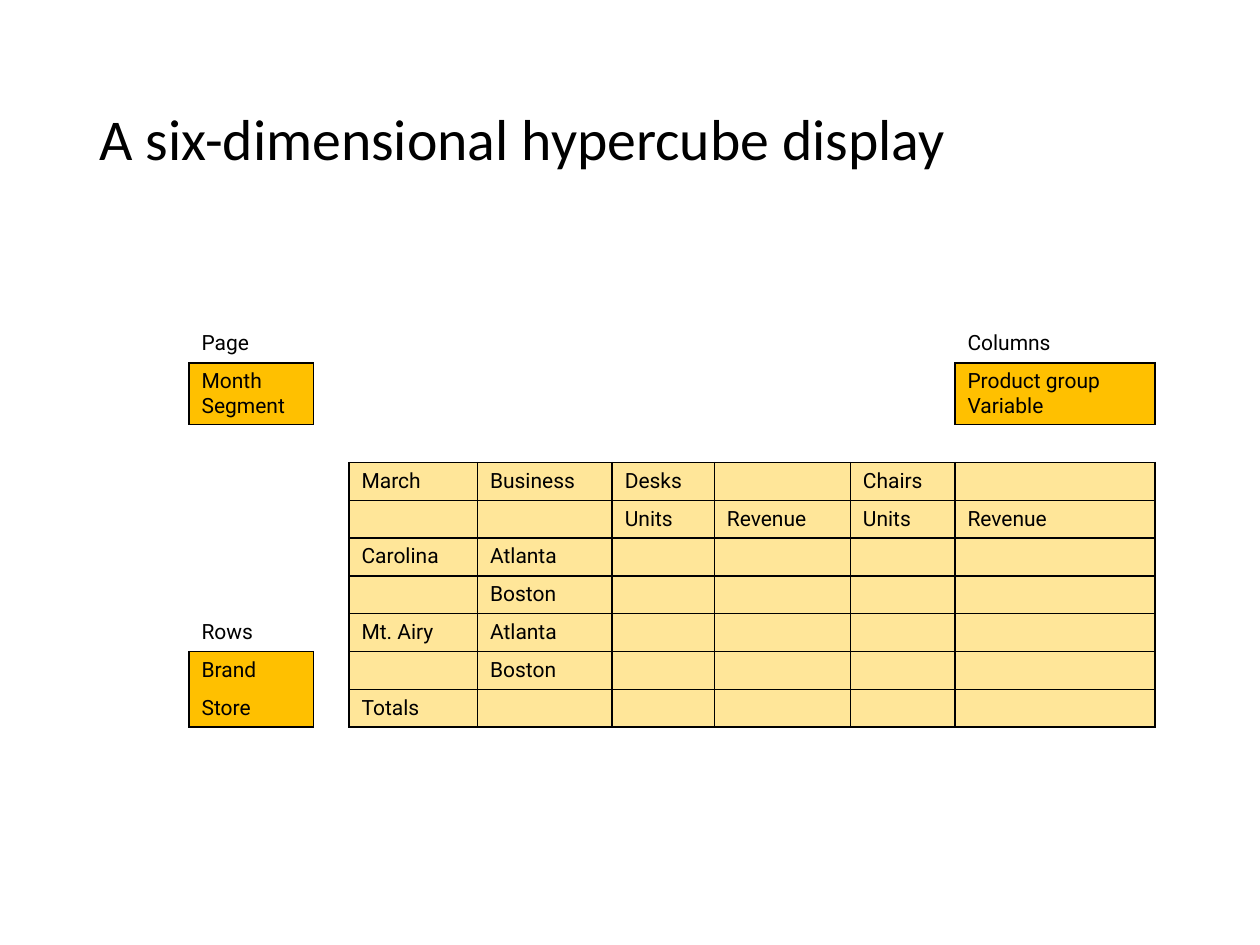
from dataclasses import dataclass

from lxml import etree
from pptx import Presentation
from pptx.dml.color import RGBColor
from pptx.enum.text import MSO_ANCHOR, MSO_AUTO_SIZE, PP_ALIGN
from pptx.oxml.ns import qn
from pptx.util import Inches, Pt

LEFT = PP_ALIGN.LEFT
MIDDLE = MSO_ANCHOR.MIDDLE
NO_AUTOFIT = MSO_AUTO_SIZE.NONE
TITLE_ONLY = 5


@dataclass(frozen=True)
class Theme:
    ink: str = "000000"
    dimension_fill: str = "FFC000"
    cube_fill: str = "FFE699"
    title_font: str = "Calibri"
    body_font: str = "Roboto"
    title_size: int = 33
    body_size: int = 12
    border_width: int = 1


THEME = Theme()

COLUMN_WIDTHS = [0.99, 0.28, 1.02, 1.07, 0.81, 1.08, 0.83, 1.59]
ROW_HEIGHTS = [0.3, 0.49] + [0.3] * 8
LAST_COLUMN = len(COLUMN_WIDTHS) - 1

# The cube's grid sits below and to the right of the dimension labels
CUBE_ROW, CUBE_COLUMN = 3, 2
CUBE = [
    ["March", "Business", "Desks", "", "Chairs", ""],
    ["", "", "Units", "Revenue", "Units", "Revenue"],
    ["Carolina", "Atlanta"],
    ["", "Boston"],
    ["Mt. Airy", "Atlanta"],
    ["", "Boston"],
    ["Totals"],
]
DIMENSION_HEADINGS = {(0, 0): "Page", (0, LAST_COLUMN): "Columns", (7, 0): "Rows"}
DIMENSIONS = {
    (1, 0): "Month\vSegment",
    (1, LAST_COLUMN): "Product group\vVariable",
    (8, 0): "Brand",
    (9, 0): "Store",
}


def style_font(paragraph, name, size):
    font = paragraph.font
    font.name, font.size = name, Pt(size)
    font.color.rgb = RGBColor.from_string(THEME.ink)


def fill_at(row, column):
    """Return the fill colour of a grid position, or None outside the boxes."""
    if (row, column) in DIMENSIONS:
        return THEME.dimension_fill
    in_rows = CUBE_ROW <= row < len(ROW_HEIGHTS)
    in_columns = CUBE_COLUMN <= column < len(COLUMN_WIDTHS)
    return THEME.cube_fill if in_rows and in_columns else None


def set_borders(cell, row, column):
    """Rule every cube cell, and only the outline of each dimension box."""
    here = fill_at(row, column)
    neighbours = {
        "a:lnL": fill_at(row, column - 1),
        "a:lnR": fill_at(row, column + 1),
        "a:lnT": fill_at(row - 1, column),
        "a:lnB": fill_at(row + 1, column),
    }
    properties = cell._tc.get_or_add_tcPr()
    for position, (tag, neighbour) in enumerate(neighbours.items()):
        line = etree.Element(qn(tag), w=str(Pt(THEME.border_width)))
        if here != neighbour or here == THEME.cube_fill:
            solid = etree.SubElement(line, qn("a:solidFill"))
            etree.SubElement(solid, qn("a:srgbClr"), val=THEME.ink)
        else:
            etree.SubElement(line, qn("a:noFill"))
        properties.insert(position, line)


def add_title(slide, left, top, width, height):
    title = slide.shapes.title
    title.left, title.top, title.width, title.height = left, top, width, height
    frame = title.text_frame
    frame.text = "A six-dimensional hypercube display"
    frame.vertical_anchor = MIDDLE
    frame.auto_size = NO_AUTOFIT
    heading = frame.paragraphs[0]
    heading.alignment = LEFT
    heading.line_spacing = 0.9
    style_font(heading, THEME.title_font, THEME.title_size)


def format_cell(cell, row, column, text):
    cell.text = text
    paragraph = cell.text_frame.paragraphs[0]
    style_font(paragraph, THEME.body_font, THEME.body_size)
    if not text:
        # Keeps an empty cell from stretching its row
        paragraph._p.get_or_add_endParaRPr().set("sz", str(THEME.body_size * 100))
    fill = fill_at(row, column)
    if fill:
        cell.fill.solid()
        cell.fill.fore_color.rgb = RGBColor.from_string(fill)
    else:
        cell.fill.background()
    set_borders(cell, row, column)


def add_hypercube(slide, left, top, width, height):
    table = slide.shapes.add_table(
        len(ROW_HEIGHTS), len(COLUMN_WIDTHS), left, top, width, height
    ).table
    table.first_row = table.horz_banding = False
    for column, column_width in zip(table.columns, COLUMN_WIDTHS):
        column.width = Inches(column_width)
    for row, row_height in zip(table.rows, ROW_HEIGHTS):
        row.height = Inches(row_height)

    wording = DIMENSION_HEADINGS | DIMENSIONS
    for r, labels in enumerate(CUBE, CUBE_ROW):
        for c, label in enumerate(labels, CUBE_COLUMN):
            wording[r, c] = label
    for r in range(len(ROW_HEIGHTS)):
        for c in range(len(COLUMN_WIDTHS)):
            format_cell(table.cell(r, c), r, c, wording.get((r, c), ""))


def main():
    deck = Presentation()
    deck.slide_width, deck.slide_height = Inches(10), Inches(7.5)
    slide = deck.slides.add_slide(deck.slide_layouts[TITLE_ONLY])
    add_title(slide, Inches(0.69), Inches(0.4), Inches(8.62), Inches(1.45))
    add_hypercube(
        slide,
        Inches(1.5),
        Inches(2.58),
        Inches(sum(COLUMN_WIDTHS)),
        Inches(sum(ROW_HEIGHTS)),
    )
    deck.save("out.pptx")


if __name__ == "__main__":
    main()
